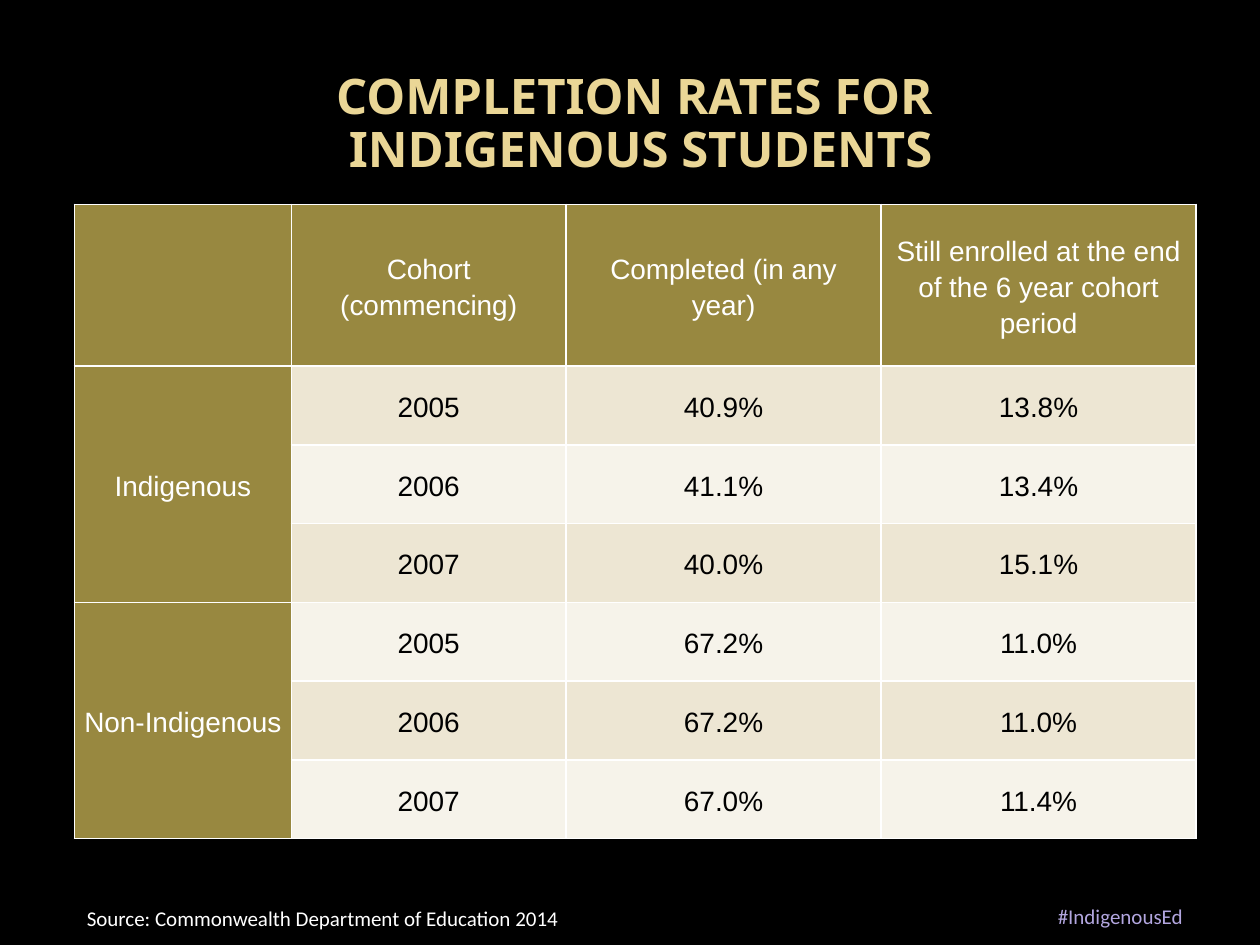
"""Build a slide with a table of completion rates for Indigenous students."""
import pptx
import pptx.dml.color
import pptx.enum.text
import pptx.oxml
import pptx.oxml.ns
import pptx.util

Pt = pptx.util.Pt
ALIGN = pptx.enum.text.PP_ALIGN
MIDDLE = pptx.enum.text.MSO_ANCHOR.MIDDLE
TOP = pptx.enum.text.MSO_ANCHOR.TOP

BLACK, WHITE, OLIVE = "000000", "FFFFFF", "988840"
BANDS = ("F6F3EA", "EDE6D3")

TEXTS = [
    {"text": "COMPLETION RATES FOR \vINDIGENOUS STUDENTS", "box": (31, 49, 670, 45),
     "anchor": MIDDLE, "align": ALIGN.CENTER, "spacing": 0.9,
     "font": {"name": "Noto Sans", "size": Pt(28), "bold": True}, "color": "EAD696"},
    {"text": "Source: Commonwealth Department of Education 2014", "box": (42.5, 514, 677.5, 22),
     "anchor": TOP, "align": ALIGN.LEFT, "spacing": 1.0,
     "font": {"name": "Calibri", "size": Pt(12)}, "color": WHITE},
    {"text": "#IndigenousEd", "box": (428, 512.5, 255, 22),
     "anchor": MIDDLE, "align": ALIGN.RIGHT, "spacing": 1.0,
     "font": {"name": "Calibri", "size": Pt(12)}, "color": "B2A6DF"},
]

HEADERS = ["", "Cohort (commencing)", "Completed (in any year)",
           "Still enrolled at the end of the 6 year cohort period"]
GROUPS = {
    "Indigenous": [("2005", "40.9%", "13.8%"), ("2006", "41.1%", "13.4%"),
                   ("2007", "40.0%", "15.1%")],
    "Non-Indigenous": [("2005", "67.2%", "11.0%"), ("2006", "67.2%", "11.0%"),
                       ("2007", "67.0%", "11.4%")],
}
TABLE_LEFT, TABLE_TOP = 42.5, 116.75
COLUMN_WIDTHS = (124, 157, 180, 180)
HEADER_HEIGHT, ROW_HEIGHT = 92.5, 45
CELL_FORMAT = {"vertical_anchor": MIDDLE, "margin_left": Pt(5), "margin_right": Pt(5),
               "margin_top": 0, "margin_bottom": 0}
CELL_FONT = {"name": "Arial", "size": Pt(16), "bold": False}


def rgb(value):
    """Return the colour for a hex string."""
    return pptx.dml.color.RGBColor.from_string(value)


def set_attributes(target, values):
    """Set each named attribute on the target."""
    for name, value in values.items():
        setattr(target, name, value)


def write_text(frame, text, align, spacing, font, color):
    """Write one formatted paragraph into a text frame."""
    paragraph = frame.paragraphs[0]
    paragraph.text = text
    set_attributes(paragraph, {"alignment": align, "line_spacing": spacing})
    for run in paragraph.runs:
        set_attributes(run.font, font)
        run.font.color.rgb = rgb(color)


def add_text(slide, item):
    """Add one text box to the slide."""
    frame = slide.shapes.add_textbox(*map(Pt, item["box"])).text_frame
    set_attributes(frame, {"word_wrap": True, "vertical_anchor": item["anchor"]})
    write_text(frame, item["text"], item["align"], item["spacing"], item["font"], item["color"])


def style_cell(cell, fill):
    """Give a cell its margins, white borders and fill."""
    set_attributes(cell, CELL_FORMAT)
    cell.fill.solid()
    cell.fill.fore_color.rgb = rgb(fill)
    properties = cell._tc.get_or_add_tcPr()
    for index, side in enumerate(("lnL", "lnR", "lnT", "lnB")):
        properties.insert(index, pptx.oxml.parse_xml(
            f'<a:{side} {pptx.oxml.ns.nsdecls("a")} w="{Pt(1)}"><a:solidFill>'
            f'<a:srgbClr val="{WHITE}"/></a:solidFill></a:{side}>'))


def add_rates_table(slide):
    """Add the table with one merged label per student group."""
    rows = [HEADERS]
    spans = []
    for label, records in GROUPS.items():
        spans.append((len(rows), len(rows) + len(records) - 1))
        rows += [(label if index == 0 else "", *record) for index, record in enumerate(records)]
    heights = [HEADER_HEIGHT] + [ROW_HEIGHT] * (len(rows) - 1)
    table = slide.shapes.add_table(
        len(rows), len(HEADERS), Pt(TABLE_LEFT), Pt(TABLE_TOP),
        Pt(sum(COLUMN_WIDTHS)), Pt(sum(heights))).table
    for column, width in zip(table.columns, COLUMN_WIDTHS):
        column.width = Pt(width)
    for row_index, (row, height) in enumerate(zip(rows, heights)):
        table.rows[row_index].height = Pt(height)
        for column_index, text in enumerate(row):
            cell = table.cell(row_index, column_index)
            is_label = row_index == 0 or column_index == 0
            style_cell(cell, OLIVE if is_label else BANDS[row_index % 2])
            write_text(cell.text_frame, text, ALIGN.CENTER, 1.15, CELL_FONT,
                       WHITE if is_label else BLACK)
    for first, last in spans:
        table.cell(first, 0).merge(table.cell(last, 0))


def main():
    """Build and save the presentation."""
    presentation = pptx.Presentation()
    set_attributes(presentation, {"slide_width": Pt(720), "slide_height": Pt(540)})
    slide = presentation.slides.add_slide(presentation.slide_layouts[6])
    slide.background.fill.solid()
    slide.background.fill.fore_color.rgb = rgb(BLACK)
    add_rates_table(slide)
    for item in TEXTS:
        add_text(slide, item)
    presentation.save("out.pptx")


if __name__ == "__main__":
    main()
